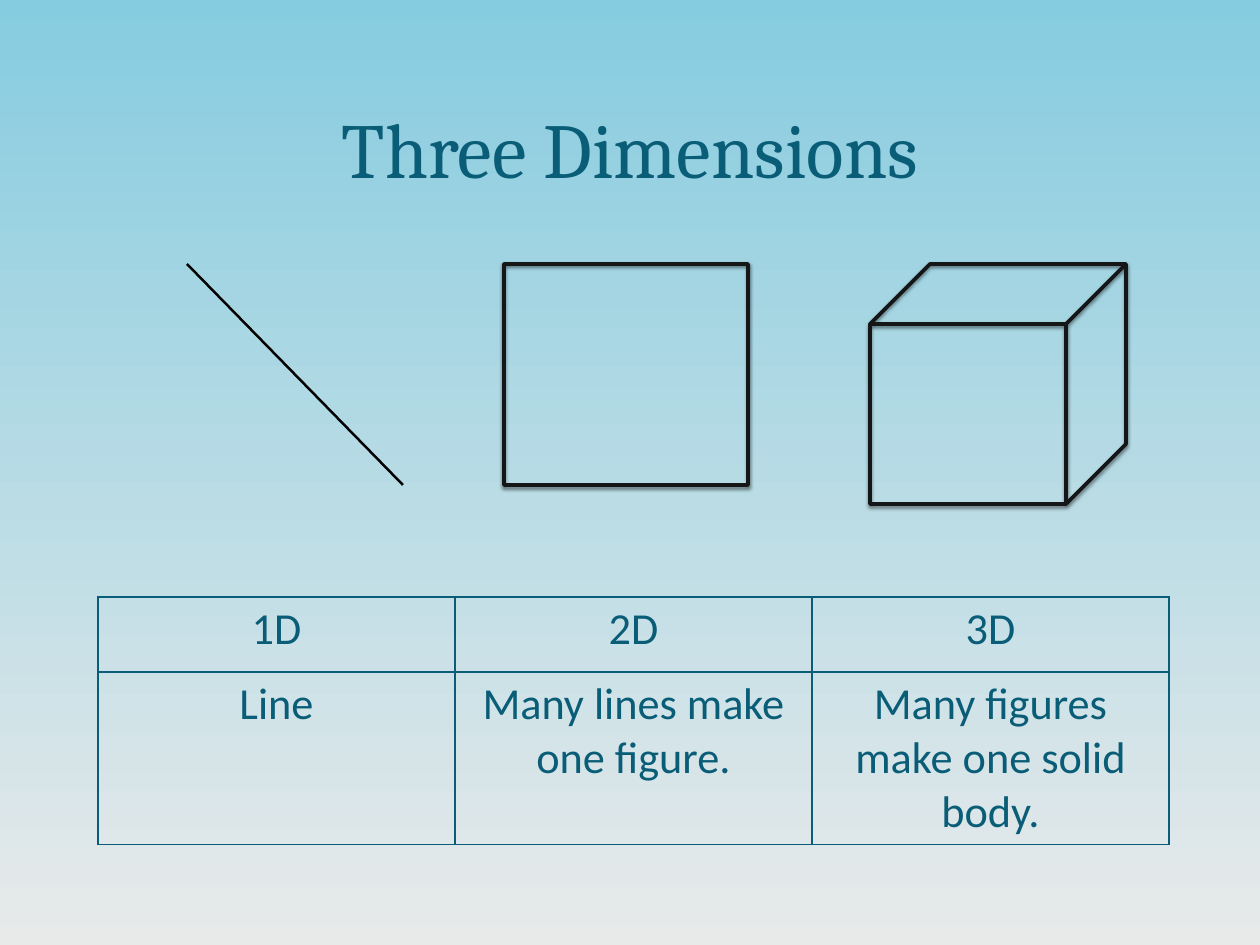
import lxml.etree
import pptx
import pptx.dml.color
import pptx.enum.shapes
import pptx.enum.text
import pptx.oxml
import pptx.oxml.ns
import pptx.util

PX = 10320  # EMU per px
THEME = {
    "sky": "86CCE0", "mist": "E8EAEA", "teal": "0A5D77",
    "ink": "151618", "black": "000000",
    "title_font": "Cambria", "title_size": 63.2,
    "body_font": "Calibri", "body_size": 36,
}
CENTER = pptx.enum.text.PP_ALIGN.CENTER
qn = pptx.oxml.ns.qn


def color(name):
    return pptx.dml.color.RGBColor.from_string(THEME[name])


def style_text(paragraph, role):
    """Center a paragraph in the theme's title or body type."""
    paragraph.alignment = CENTER
    paragraph.font.name = THEME[role + "_font"]
    paragraph.font.size = pptx.util.Pt(THEME[role + "_size"])
    paragraph.font.color.rgb = color("teal")


deck = pptx.Presentation()
deck.slide_width, deck.slide_height = 1260 * PX, 945 * PX
slide = deck.slides.add_slide(deck.slide_layouts[5])

# Background
sky = slide.background.fill
sky.gradient()
sky.gradient_angle = 270
for stop, position, name in zip(sky.gradient_stops, (0, 1), ("sky", "mist")):
    stop.position = position
    stop.color.rgb = color(name)

# Title
title = slide.shapes.title
title.left, title.top, title.width, title.height = 92 * PX, 43 * PX, 1076 * PX, 209 * PX
heading = title.text_frame
heading.text = "Three Dimensions"
heading.auto_size = pptx.enum.text.MSO_AUTO_SIZE.NONE
heading.vertical_anchor = pptx.enum.text.MSO_ANCHOR.MIDDLE
heading.margin_left = heading.margin_right = 5 * PX
heading.margin_top = heading.margin_bottom = 5 * PX
style_text(heading.paragraphs[0], "title")

# One, two and three dimensions, all hanging from the same top edge
FIGURE_TOP = 264
line = slide.shapes.add_connector(
    pptx.enum.shapes.MSO_CONNECTOR.STRAIGHT,
    187 * PX, FIGURE_TOP * PX, 403 * PX, 485 * PX)
line.line.color.rgb = color("black")
line.line.width = pptx.util.Pt(2)
lxml.etree.SubElement(line._element.spPr, qn("a:effectLst"))

SHADOW = (
    f'<a:outerShdw {pptx.oxml.ns.nsdecls("a")} blurRad="{pptx.util.Pt(3)}" '
    f'dist="{pptx.util.Pt(2)}" dir="5400000" rotWithShape="0">'
    f'<a:srgbClr val="{THEME["black"]}"><a:alpha val="50000"/></a:srgbClr></a:outerShdw>')
PRESET = pptx.enum.shapes.MSO_SHAPE
for preset, left, width, height in ((PRESET.RECTANGLE, 504, 244, 221),
                                    (PRESET.CUBE, 870, 256, 240)):
    figure = slide.shapes.add_shape(
        preset, left * PX, FIGURE_TOP * PX, width * PX, height * PX)
    figure.fill.background()
    figure.line.color.rgb = color("ink")
    figure.line.width = pptx.util.Pt(3)
    figure.shadow.inherit = False
    effects = figure._element.spPr.find(qn("a:effectLst"))
    effects.append(pptx.oxml.parse_xml(SHADOW))

# Explanations
EXPLANATIONS = (
    ("1D", "2D", "3D"),
    ("Line", "Many lines make one figure.", "Many figures make one solid body."),
)
COLUMN_WIDTH, ROW_HEIGHTS = 357, (75, 172)
table = slide.shapes.add_table(
    2, 3, 98 * PX, 597 * PX, 3 * COLUMN_WIDTH * PX, sum(ROW_HEIGHTS) * PX).table
table.first_row = table.horz_banding = False
for column in table.columns:
    column.width = COLUMN_WIDTH * PX
for row, height, texts in zip(table.rows, ROW_HEIGHTS, EXPLANATIONS):
    row.height = height * PX
    for cell, text in zip(row.cells, texts):
        cell.text = text
        cell.margin_left = cell.margin_right = 13 * PX
        cell.margin_top = cell.margin_bottom = 5 * PX
        style_text(cell.text_frame.paragraphs[0], "body")
        properties = cell._tc.get_or_add_tcPr()
        for side in ("lnL", "lnR", "lnT", "lnB"):
            properties.append(pptx.oxml.parse_xml(
                f'<a:{side} {pptx.oxml.ns.nsdecls("a")} w="{pptx.util.Pt(1)}"><a:solidFill>'
                f'<a:srgbClr val="{THEME["teal"]}"/></a:solidFill></a:{side}>'))
        cell.fill.background()

deck.save("out.pptx")
